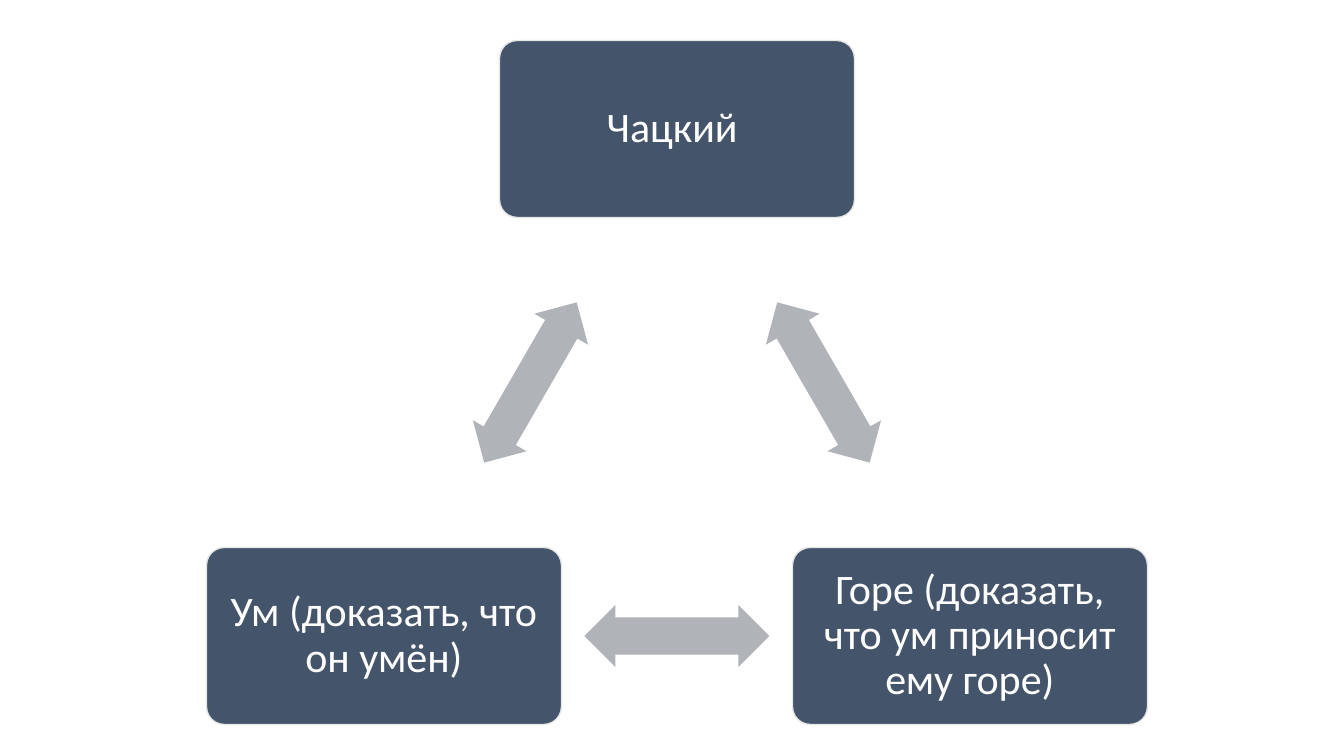
from dataclasses import dataclass

from pptx import Presentation
from pptx.dml.color import RGBColor
from pptx.enum.shapes import MSO_SHAPE
from pptx.enum.text import MSO_ANCHOR, PP_ALIGN
from pptx.util import Emu, Pt


@dataclass(frozen=True)
class Theme:
    """Colours and type of the slide."""
    card: RGBColor = RGBColor.from_string("44546A")
    border: RGBColor = RGBColor.from_string("E7E6E6")
    link: RGBColor = RGBColor.from_string("B0B4B9")
    text: RGBColor = RGBColor.from_string("FFFFFF")
    font: str = "Calibri"
    size: int = 30


THEME = Theme()
SLIDE_SIZE = (1344, 756)
CARD_SIZE = (355, 177)
LINK_SIZE = (185, 62)
IDEAS = [
    ("Чацкий ", (677, 129)),
    ("Горе (доказать, что ум приносит ему горе)", (970, 636)),
    ("Ум (доказать, что он умён)", (384, 636)),
]
LINK_ANGLES = (60, 180, 300)


def px(length):
    """Turn pixels into EMU."""
    return Emu(round(length * 914400 / 100.8))


def add_centred(slide, preset, centre, size, fill):
    """Add a flat filled preset shape around a centre point."""
    left, top = (middle - extent / 2 for middle, extent in zip(centre, size))
    shape = slide.shapes.add_shape(preset, px(left), px(top), *map(px, size))
    shape.shadow.inherit = False
    shape.fill.solid()
    shape.fill.fore_color.rgb = fill
    return shape


def write_text(frame, text, *, size=THEME.size, color=THEME.text, font=THEME.font,
               align=PP_ALIGN.CENTER, spacing=0.9, inset=12):
    """Fill a text frame with one formatted paragraph."""
    frame.word_wrap = True
    frame.vertical_anchor = MSO_ANCHOR.MIDDLE
    frame.margin_left = frame.margin_right = px(inset)
    frame.margin_top = frame.margin_bottom = px(inset)
    paragraph = frame.paragraphs[0]
    paragraph.alignment = align
    paragraph.line_spacing = spacing
    run = paragraph.add_run()
    run.text = text
    run.font.size = Pt(size)
    run.font.name = font
    run.font.color.rgb = color


def add_card(slide, text, centre):
    """Add a rounded card holding one idea."""
    card = add_centred(slide, MSO_SHAPE.ROUNDED_RECTANGLE, centre, CARD_SIZE, THEME.card)
    card.adjustments[0] = 0.1
    card.line.color.rgb = THEME.border
    card.line.width = Pt(1)
    write_text(card.text_frame, text)


def add_link(slide, start, end, angle):
    """Add a two-headed arrow midway between two cards."""
    middle = [(a + b) / 2 for a, b in zip(start, end)]
    link = add_centred(slide, MSO_SHAPE.LEFT_RIGHT_ARROW, middle, LINK_SIZE, THEME.link)
    link.adjustments[0] = 0.6
    link.adjustments[1] = 0.5
    link.line.fill.background()
    link.rotation = angle


def main():
    """Build the triangle of ideas and save it."""
    deck = Presentation()
    deck.slide_width, deck.slide_height = map(px, SLIDE_SIZE)
    slide = deck.slides.add_slide(deck.slide_layouts[6])
    following = IDEAS[1:] + IDEAS[:1]
    for (text, centre), (_, next_centre), angle in zip(IDEAS, following, LINK_ANGLES):
        add_card(slide, text, centre)
        add_link(slide, centre, next_centre, angle)
    deck.save("out.pptx")


if __name__ == "__main__":
    main()
